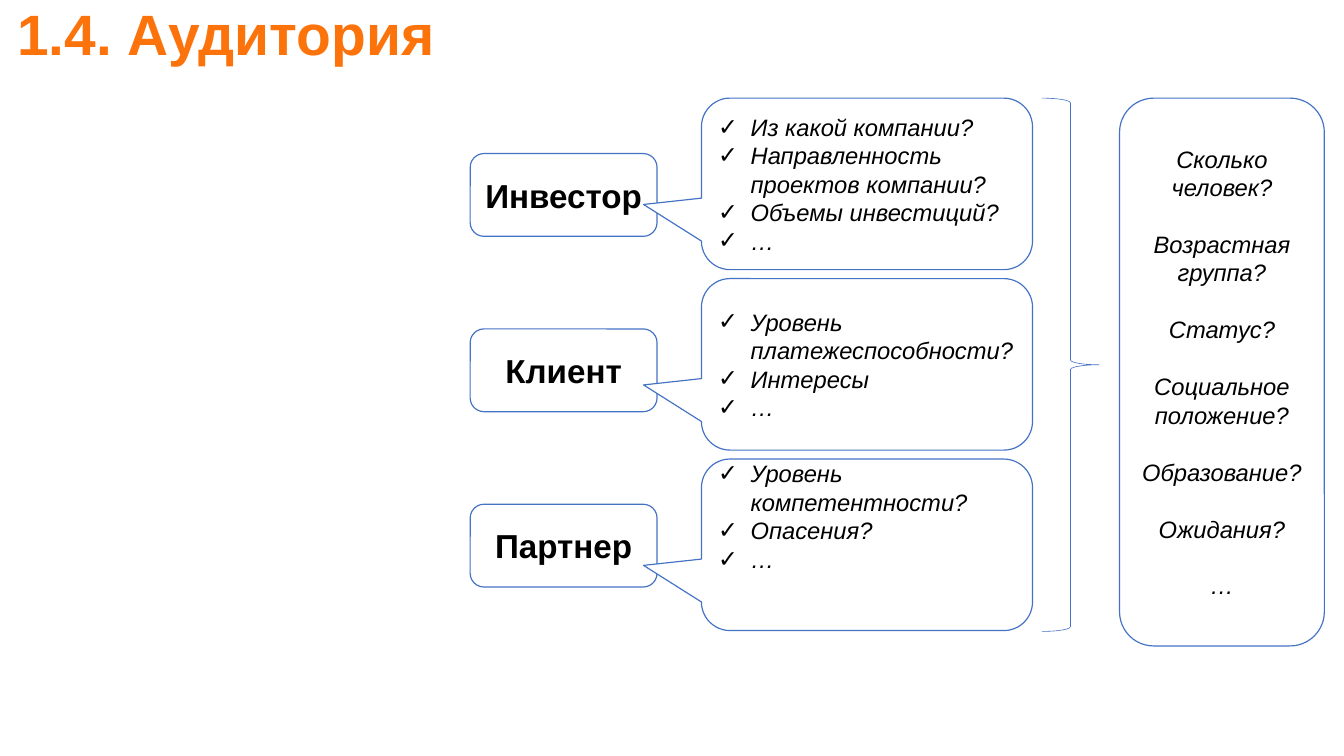
from dataclasses import dataclass

import pptx
import pptx.dml.color
import pptx.enum.shapes
import pptx.enum.text
import pptx.oxml
import pptx.oxml.ns
import pptx.util
from pptx.util import Inches

COLORS = {"title": "FC730C", "line": "4472C4", "fill": "FFFFFF", "text": "000000"}
FONT = "Arial"
SHAPES = pptx.enum.shapes.MSO_SHAPE
ALIGN = pptx.enum.text.PP_ALIGN
MIDDLE = pptx.enum.text.MSO_ANCHOR.MIDDLE

LABEL_TOP, LABEL_STEP = 1.8, 2.055
CALLOUT_TOP, CALLOUT_STEP = 1.15, 2.115
BULLET_INDENT = 0.38


@dataclass
class Audience:
    name: str
    questions: list[str]
    bottom_inset: float = 0.05


AUDIENCES = [
    Audience("Инвестор", ["Из какой компании?", "Направленность проектов компании?",
                          "Объемы инвестиций?", "…"]),
    Audience("Клиент", ["Уровень платежеспособности?", "Интересы", "…"]),
    Audience("Партнер", ["Уровень компетентности?", "Опасения?", "…"], 0.72),
]
COMMON_QUESTIONS = ["Сколько человек?", "Возрастная группа?", "Статус?",
                    "Социальное положение?", "Образование?", "Ожидания?", "…"]


def rgb(name: str) -> pptx.dml.color.RGBColor:
    return pptx.dml.color.RGBColor.from_string(COLORS[name])


def add_outline(page, kind, left: float, top: float, width: float, height: float,
                weight: float = 1, filled: bool = True):
    shape = page.shapes.add_shape(kind, Inches(left), Inches(top), Inches(width), Inches(height))
    shape.shadow.inherit = False
    if filled:
        shape.fill.solid()
        shape.fill.fore_color.rgb = rgb("fill")
    else:
        shape.fill.background()
    shape.line.color.rgb = rgb("line")
    shape.line.width = pptx.util.Pt(weight)
    return shape


def write(box, lines: list[str], size: float, align, color: str = "text",
          bold: bool = False, italic: bool = False, gap: float = 0) -> None:
    frame = box.text_frame
    frame.word_wrap = True
    frame.vertical_anchor = MIDDLE
    frame.text = "\n".join(lines)
    for index, para in enumerate(frame.paragraphs):
        para.alignment = align
        if gap and index:
            para.space_before = pptx.util.Pt(gap)
        for span in para.runs:
            span.font.name = FONT
            span.font.size = pptx.util.Pt(size)
            span.font.bold = bold
            span.font.italic = italic
            span.font.color.rgb = rgb(color)


def add_check_marks(box) -> None:
    for para in box.text_frame.paragraphs:
        properties = para._p.get_or_add_pPr()
        properties.set("marL", str(Inches(BULLET_INDENT)))
        properties.set("indent", str(-Inches(BULLET_INDENT)))
        for tag, key, value in (("a:buFont", "typeface", FONT), ("a:buChar", "char", "✓")):
            bullet = pptx.oxml.parse_xml(f"<{tag} {pptx.oxml.ns.nsdecls('a')}/>")
            bullet.set(key, value)
            properties.append(bullet)


def add_audience(page, row: int, audience: Audience) -> None:
    label = add_outline(page, SHAPES.ROUNDED_RECTANGLE,
                        5.51, LABEL_TOP + row * LABEL_STEP, 2.19, 0.97)
    write(label, [audience.name], 28, ALIGN.CENTER, bold=True)

    callout = add_outline(page, SHAPES.ROUNDED_RECTANGULAR_CALLOUT,
                          8.22, CALLOUT_TOP + row * CALLOUT_STEP, 3.88, 2.01)
    callout.adjustments[0] = -0.675
    callout.adjustments[1] = 0.12
    write(callout, audience.questions, 20, ALIGN.LEFT, italic=True)
    callout.text_frame.margin_bottom = Inches(audience.bottom_inset)
    add_check_marks(callout)


def main() -> None:
    deck = pptx.Presentation()
    deck.slide_width, deck.slide_height = Inches(15.75), Inches(8.86)
    page = deck.slides.add_slide(deck.slide_layouts[6])

    # Title
    title = page.shapes.add_textbox(Inches(0.08), Inches(-0.56), Inches(15.67), Inches(1.89))
    write(title, ["1.4. Аудитория"], 48, ALIGN.LEFT, "title", bold=True)
    frame = title.text_frame
    frame.margin_left = frame.margin_right = Inches(0.12)
    frame.margin_top = frame.margin_bottom = Inches(0.12)

    # Audiences with their questions
    for row, audience in enumerate(AUDIENCES):
        add_audience(page, row, audience)

    # Questions common to all audiences
    add_outline(page, SHAPES.RIGHT_BRACE, 12.21, 1.15, 0.67, 6.25, weight=0.5, filled=False)
    panel = add_outline(page, SHAPES.ROUNDED_RECTANGLE, 13.12, 1.15, 2.4, 6.42)
    write(panel, COMMON_QUESTIONS, 20, ALIGN.CENTER, italic=True, gap=24)

    deck.save("out.pptx")


if __name__ == "__main__":
    main()
